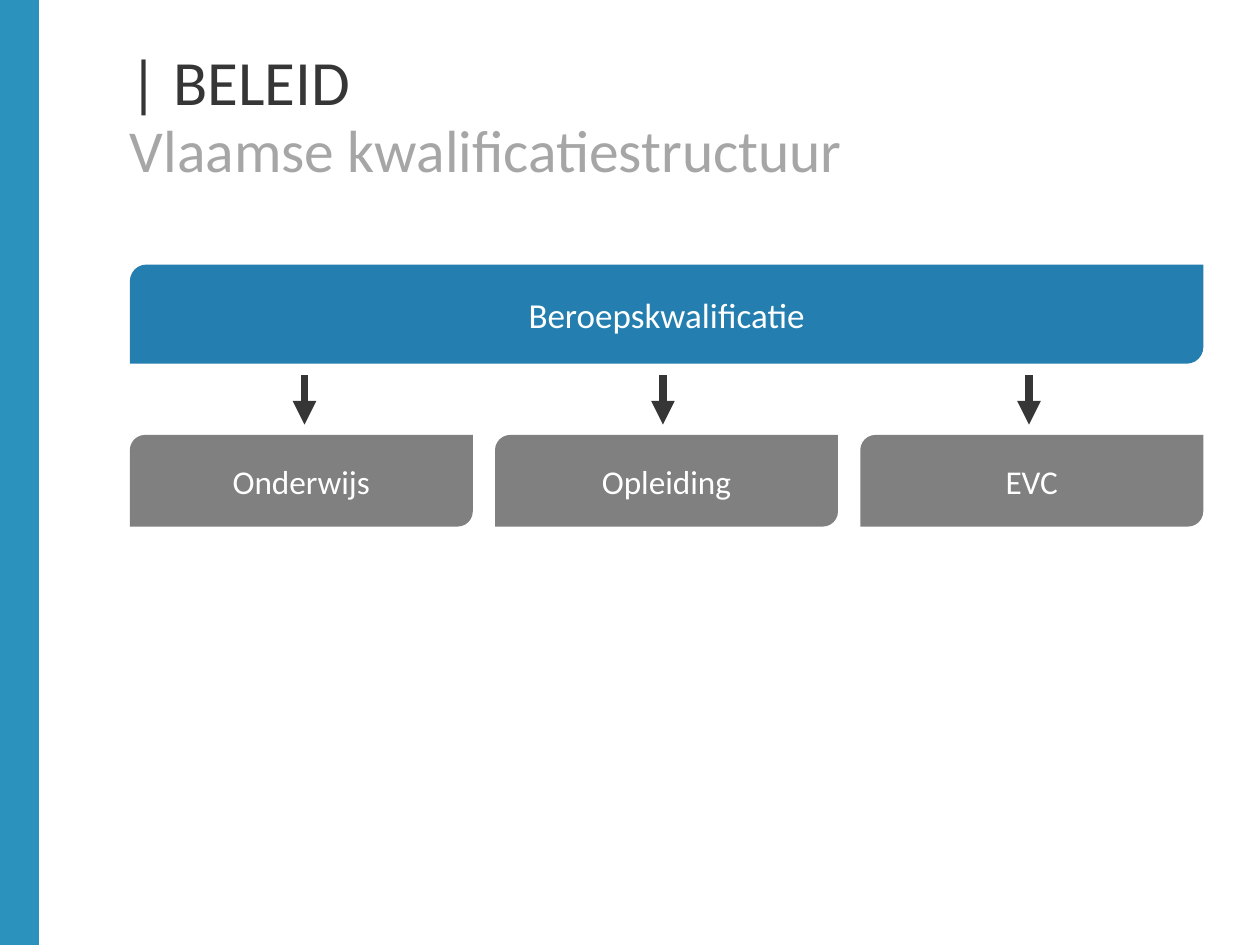
from lxml import etree
from pptx import Presentation
from pptx.dml import color
from pptx.enum import shapes, text
from pptx.oxml import ns
from pptx.util import Pt


def rgb(value):
    return color.RGBColor.from_string(value)


def add_block(left, top, width, height, fill, label, size):
    block = slide.shapes.add_shape(
        shapes.MSO_SHAPE.ROUND_2_DIAG_RECTANGLE, Pt(left), Pt(top), Pt(width), Pt(height))
    block.shadow.inherit = False
    block.fill.solid()
    block.fill.fore_color.rgb = rgb(fill)
    block.line.fill.background()
    block.text_frame.vertical_anchor = text.MSO_ANCHOR.MIDDLE
    caption = block.text_frame.paragraphs[0]
    caption.alignment = text.PP_ALIGN.CENTER
    run = caption.add_run()
    run.text = label
    for key, value in {"name": "Calibri", "size": Pt(size)}.items():
        setattr(run.font, key, value)
    run.font.color.rgb = rgb("FFFFFF")


deck = Presentation()
deck.slide_width, deck.slide_height = Pt(720), Pt(540)
slide = deck.slides.add_slide(deck.slide_layouts[6])
left, width = 74.2, 613.4

side_band = slide.shapes.add_shape(shapes.MSO_SHAPE.RECTANGLE, 0, 0, Pt(22.2), Pt(540))
side_band.shadow.inherit = False
side_band.fill.solid()
side_band.fill.fore_color.rgb = rgb("2B92BE")
side_band.line.color.rgb = rgb("2B92BE")
side_band.line.width = Pt(0.5)

heading = slide.shapes.add_textbox(Pt(left), Pt(29.5), Pt(width), Pt(87.8)).text_frame
frame_format = {"word_wrap": True, "margin_left": 0, "margin_top": 0,
                "margin_right": 0, "margin_bottom": 0}
for key, value in frame_format.items():
    setattr(heading, key, value)
heading_lines = heading.paragraphs[0]
heading_lines.line_spacing = Pt(38)
for words, size, shade in [("| BELEID", 36, "373636"),
                           ("Vlaamse kwalificatiestructuur", 34, "A6A6A6")]:
    if heading_lines.runs:
        heading_lines.add_line_break()
    run = heading_lines.add_run()
    run.text = words
    for key, value in {"name": "Calibri", "size": Pt(size)}.items():
        setattr(run.font, key, value)
    run.font.color.rgb = rgb(shade)

add_block(left, 151.2, width, 56.6, "247FB0", "Beroepskwalificatie", 20)

route_width = 196
pitch = (width - route_width) / 2
for index, (route, arrow_x) in enumerate(
        [("Onderwijs", 174), ("Opleiding", 378.8), ("EVC", 588)]):
    add_block(left + index * pitch, 248.5, route_width, 52.4, "808080", route, 19)
    arrow = slide.shapes.add_connector(
        shapes.MSO_CONNECTOR.STRAIGHT, Pt(arrow_x), Pt(214.5), Pt(arrow_x), Pt(242.6))
    arrow.line.color.rgb = rgb("373636")
    arrow.line.width = Pt(4.5)
    etree.SubElement(arrow.line._get_or_add_ln(), ns.qn("a:tailEnd"), type="triangle")
    etree.SubElement(arrow._element.spPr, ns.qn("a:effectLst"))

deck.save("out.pptx")
